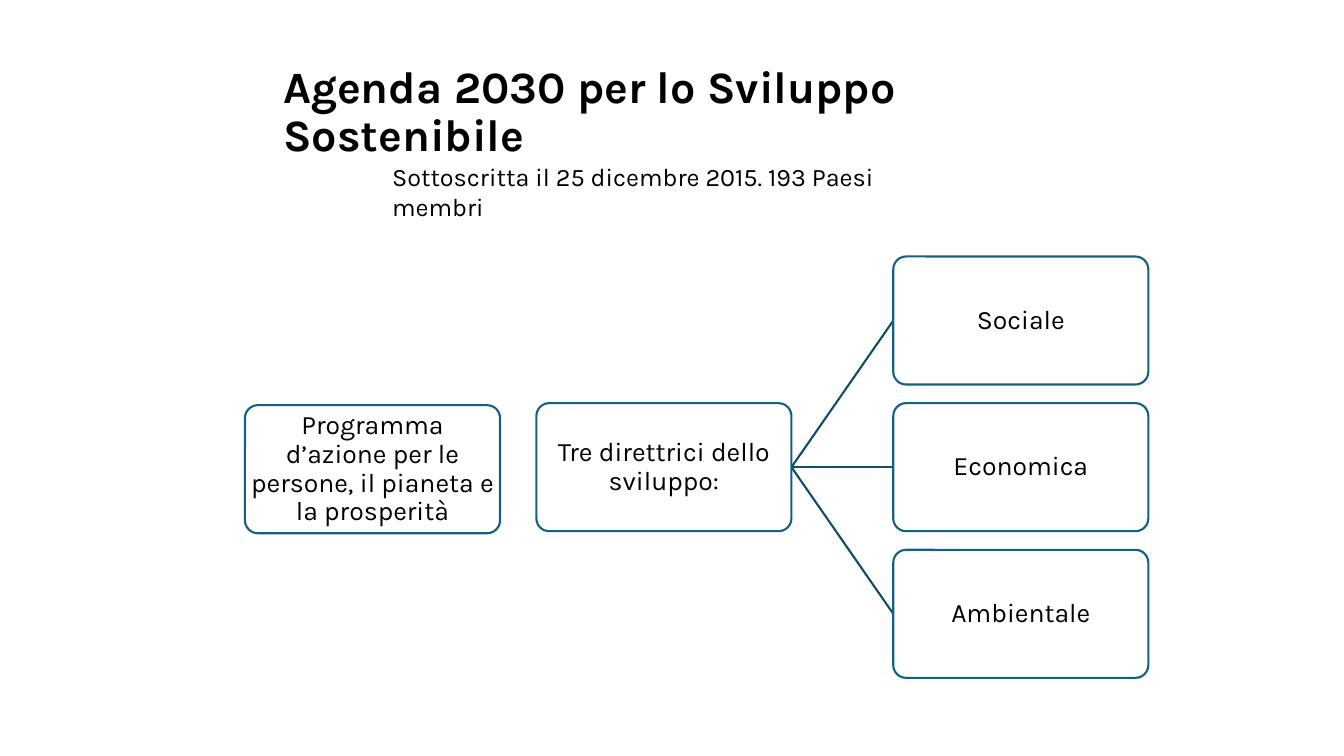
from dataclasses import dataclass

from lxml.etree import SubElement as SubEl
from pptx import Presentation as Deck
from pptx.dml.color import RGBColor as Rgb
from pptx.enum.shapes import MSO_CONNECTOR as Link, MSO_SHAPE as Form
from pptx.enum.text import MSO_ANCHOR as Anchor, PP_ALIGN as Align
from pptx.oxml.ns import qn
from pptx.shapes.autoshape import Shape
from pptx.slide import Slide
from pptx.util import Inches, Pt


@dataclass(frozen=True)
class Theme:
    font: str = "Karla"
    ink: Rgb = Rgb(0, 0, 0)
    paper: Rgb = Rgb(255, 255, 255)
    edge: Rgb = Rgb(0x15, 0x60, 0x82)
    link: Rgb = Rgb(0x11, 0x4D, 0x68)
    title: float = 32
    label: float = 19
    note: float = 18
    line: float = 1.5


@dataclass(frozen=True)
class Node:
    text: str
    left: float
    top: float
    wide: float = 2.53
    high: float = 1.27

    @property
    def right(self) -> float:
        return self.left + self.wide

    @property
    def mid(self) -> float:
        return self.top + self.high / 2


THEME = Theme()
PLAN = Node("Programma d’azione per le persone, il pianeta e la prosperità", 2.43, 4.02)
ROOT = Node("Tre direttrici dello sviluppo:", 5.32, 4)
STEP = 1.455
AXES = [
    Node(name, 8.86, ROOT.top + (i - 1) * STEP)
    for i, name in enumerate(("Sociale", "Economica", "Ambientale"))
]


def write(shape: Shape, text: str, *, size: float, bold: bool = False,
          align: Align = Align.LEFT, anchor: Anchor = Anchor.TOP,
          space: float = 1.0, pad: tuple[float, float] = (0.1, 0.05)) -> None:
    """Put formatted text into a shape."""
    frame = shape.text_frame
    frame.word_wrap = True
    frame.vertical_anchor = anchor
    frame.margin_left = frame.margin_right = Inches(pad[0])
    frame.margin_top = frame.margin_bottom = Inches(pad[1])
    para = frame.paragraphs[0]
    para.alignment = align
    para.line_spacing = space
    run = para.add_run()
    run.text = text
    run.font.name = THEME.font
    run.font.size = Pt(size)
    run.font.bold = bold
    run.font.color.rgb = THEME.ink


def add_text(slide: Slide, node: Node, **style) -> None:
    """Add a plain text box."""
    box = slide.shapes.add_textbox(
        Inches(node.left), Inches(node.top), Inches(node.wide), Inches(node.high))
    write(box, node.text, **style)


def add_node(slide: Slide, node: Node) -> None:
    """Add a rounded box with a centred label."""
    box = slide.shapes.add_shape(
        Form.ROUNDED_RECTANGLE, Inches(node.left), Inches(node.top),
        Inches(node.wide), Inches(node.high))
    box.adjustments[0] = 0.1
    box.shadow.inherit = False
    box.fill.solid()
    box.fill.fore_color.rgb = THEME.paper
    box.line.color.rgb = THEME.edge
    box.line.width = Pt(THEME.line)
    write(box, node.text, size=THEME.label, align=Align.CENTER,
          anchor=Anchor.MIDDLE, space=0.9, pad=(0.01, 0.01))


def add_link(slide: Slide, start: Node, end: Node) -> None:
    """Join the right side of one box to the left side of another."""
    line = slide.shapes.add_connector(
        Link.STRAIGHT, Inches(start.right), Inches(start.mid),
        Inches(end.left), Inches(end.mid))
    line.line.color.rgb = THEME.link
    line.line.width = Pt(THEME.line)
    SubEl(line._element.spPr, qn("a:effectLst"))


def main() -> None:
    """Build the slide and save it."""
    deck = Deck()
    deck.slide_width, deck.slide_height = Inches(13.33), Inches(7.5)
    slide = deck.slides.add_slide(deck.slide_layouts[6])
    add_text(slide, Node("Agenda 2030 per lo Sviluppo Sostenibile", 2.71, 0.49, 7.92, 1.26),
             size=THEME.title, bold=True, anchor=Anchor.MIDDLE, space=0.9)
    for axis in AXES:
        add_link(slide, ROOT, axis)
    for node in (ROOT, *AXES, PLAN):
        add_node(slide, node)
    add_text(slide, Node("Sottoscritta il 25 dicembre 2015. 193 Paesi membri", 3.79, 1.55, 5.75, 0.4),
             size=THEME.note)
    deck.save("out.pptx")


if __name__ == "__main__":
    main()
